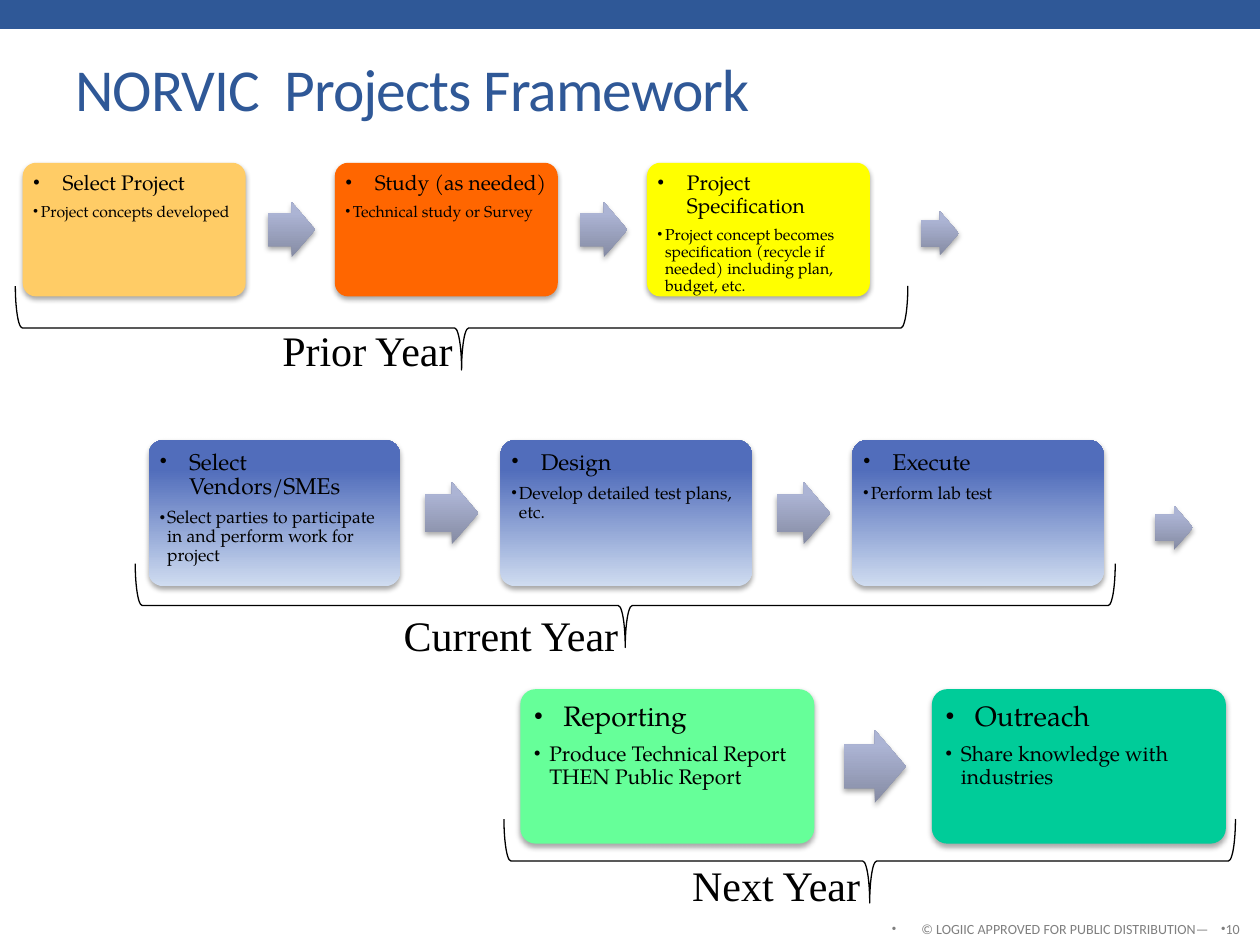
from lxml.etree import SubElement
from pptx import Presentation
from pptx.dml.color import RGBColor
from pptx.enum.shapes import MSO_SHAPE as SHAPE
from pptx.enum.text import MSO_ANCHOR as ANCHOR, PP_ALIGN as ALIGN
from pptx.oxml.ns import qn
from pptx.util import Pt

SERIF, SANS, BODY = "Times New Roman", "Calibri", "TeX Gyre Pagella"
BLUE, GREY, BLACK = "2F5897", "7F7F7F", "000000"
BLUE_FADE = ("CFDCF0", "516DBB")
ARROW_FADE = ("858BA3", "ACB4D4")

ROWS = [
    dict(left=13, top=93, width=127.4, height=76.4, sizes=(12, 9), inset=3.6, hang=4.5, steps=[
        ("Select Project", "Project concepts developed", "FFCC66"),
        ("Study (as needed)", "Technical study or Survey", "FF6600"),
        ("Project Specification", "Project concept becomes specification (recycle if needed) "
         "including plan, budget, etc.", "FFFF00")]),
    dict(left=85, top=251.5, width=143.6, height=83.5, sizes=(13, 10), inset=3.6, hang=4.5, steps=[
        ("Select Vendors/SMEs", "Select parties to participate in and perform work for project",
         BLUE_FADE),
        ("Design", "Develop detailed test plans, etc.", BLUE_FADE),
        ("Execute", "Perform lab test", BLUE_FADE)]),
    dict(left=297.3, top=393.8, width=168, height=88.3, sizes=(16, 12), inset=5, hang=9, steps=[
        ("Reporting", "Produce Technical Report THEN Public Report", "66FF99"),
        ("Outreach", "Share knowledge with industries", "00CC99")]),
]


def rgb(value):
    """Turn a hex string into a colour."""
    return RGBColor.from_string(value)


def paint(sp, fill):
    """Fill a shape with one colour, or fade a pair from bottom to top."""
    if isinstance(fill, str):
        sp.fill.solid()
        sp.fill.fore_color.rgb = rgb(fill)
        return
    sp.fill.gradient()
    sp.fill.gradient_angle = 90
    for stop, color, position in zip(sp.fill.gradient_stops, fill, (0, 0.8)):
        stop.color.rgb = rgb(color)
        stop.position = position


def add_shadow(sp):
    """Give a shape a soft shadow below it."""
    effects = sp._element.spPr.find(qn("a:effectLst"))
    outer = SubElement(effects, qn("a:outerShdw"), blurRad=str(Pt(3.1)), dist=str(Pt(1.8)),
                       dir="5400000", rotWithShape="0")
    color = SubElement(outer, qn("a:srgbClr"), val=BLACK)
    SubElement(color, qn("a:alpha"), val="35000")


def add_filled(s, kind, left, top, width, height, fill):
    """Add a filled shape without outline."""
    sp = s.shapes.add_shape(kind, Pt(left), Pt(top), Pt(width), Pt(height))
    sp.shadow.inherit = False
    sp.line.fill.background()
    paint(sp, fill)
    return sp


def add_bullet(p, hang):
    """Put a bullet and hanging indent on a paragraph."""
    pPr = p._p.get_or_add_pPr()
    pPr.set("marL", str(Pt(hang)))
    pPr.set("indent", str(-Pt(hang)))
    SubElement(pPr, qn("a:buFont"), typeface=SERIF)
    SubElement(pPr, qn("a:buChar"), char="•")


def style(p, size, font, color):
    """Format the runs of a paragraph."""
    for r in p.runs:
        r.font.size = Pt(size)
        r.font.name = font
        r.font.color.rgb = rgb(color)


def add_text(s, text, left, top, width, height, size, font, color,
             align=ALIGN.LEFT, hang=None, right=7.2):
    """Add a wrapped one-paragraph text box."""
    tf = s.shapes.add_textbox(Pt(left), Pt(top), Pt(width), Pt(height)).text_frame
    tf.word_wrap = True
    tf.margin_right = Pt(right)
    p = tf.paragraphs[0]
    p.text = text
    p.alignment = align
    if hang is not None:
        add_bullet(p, hang)
    style(p, size, font, color)
    return tf


def add_title(s, text):
    """Add the slide title."""
    tf = add_text(s, text, 36, 0, 648, 74, 34, SANS, BLUE)
    tf.vertical_anchor = ANCHOR.BOTTOM
    p = tf.paragraphs[0]
    p.line_spacing = 0.8
    p.runs[0]._r.get_or_add_rPr().set("spc", "-50")


def add_arrow(s, left, middle, width, height):
    """Add a block arrow centred on a height."""
    sp = add_filled(s, SHAPE.RIGHT_ARROW, left, middle - height / 2, width, height, ARROW_FADE)
    sp.adjustments[0] = 0.6
    add_shadow(sp)


def add_step(s, left, row, step):
    """Add a rounded box with a heading and a detail."""
    heading, detail, fill = step
    sp = add_filled(s, SHAPE.ROUNDED_RECTANGLE, left, row["top"], row["width"], row["height"], fill)
    sp.adjustments[0] = 0.1
    add_shadow(sp)
    tf = sp.text_frame
    tf.word_wrap = True
    tf.vertical_anchor = ANCHOR.TOP
    tf.margin_left = tf.margin_right = tf.margin_top = tf.margin_bottom = Pt(row["inset"])
    tf.text = f"{heading}\n{detail}"
    for p, size, hang, after in zip(tf.paragraphs, row["sizes"], (17, row["hang"]), (0.4, 0)):
        p.alignment = ALIGN.LEFT
        p.line_spacing = 0.9
        p.space_after = Pt(round(size * after, 1))
        add_bullet(p, hang)
        style(p, size, BODY, BLACK)


def add_row(s, row):
    """Add a row of steps joined by arrows."""
    width = row["width"]
    for i, step in enumerate(row["steps"]):
        left = row["left"] + i * 1.4 * width
        if i:
            add_arrow(s, left - 0.3 * width, row["top"] + row["height"] / 2,
                      0.212 * width, 0.248 * width)
        add_step(s, left, row, step)


def add_brace(s, center, top, length, depth=48):
    """Add a brace that opens upward."""
    sp = s.shapes.add_shape(SHAPE.LEFT_BRACE, Pt(center - depth / 2),
                            Pt(top + depth / 2 - length / 2), Pt(depth), Pt(length))
    sp.rotation = 270
    sp.shadow.inherit = False
    sp.fill.background()
    sp.line.color.rgb = rgb(BLACK)
    sp.line.width = Pt(0.75)


def main():
    """Build the slide."""
    prs = Presentation()
    prs.slide_width, prs.slide_height = Pt(720), Pt(540)
    s = prs.slides.add_slide(prs.slide_layouts[6])
    add_filled(s, SHAPE.RECTANGLE, 0, 0, 720, 16.5, BLUE)
    add_title(s, "NORVIC  Projects Framework")
    for row in ROWS:
        add_row(s, row)
    for left, middle in ((526.3, 133.3), (660.2, 301.5)):
        add_arrow(s, left, middle, 21.6, 25.2)
    for center, top, length in ((263.8, 163.4, 510), (357.3, 322, 560), (497, 468, 418)):
        add_brace(s, center, top, length)
    for text, left, top, width in (("Prior Year", 102, 182, 216),
                                   ("Current Year", 139, 345, 306),
                                   ("Next Year", 374.5, 487.5, 138)):
        add_text(s, text, left, top, width, 36, 24, SERIF, BLACK, ALIGN.CENTER)
    add_text(s, "© LOGIIC APPROVED FOR PUBLIC DISTRIBUTION—", 478, 522.7, 213, 17.3,
             8, SANS, GREY, ALIGN.RIGHT, hang=17, right=0)
    add_text(s, "10", 690.5, 522.7, 29.5, 17.3, 8, SANS, GREY, hang=0)
    prs.save("out.pptx")


if __name__ == "__main__":
    main()
